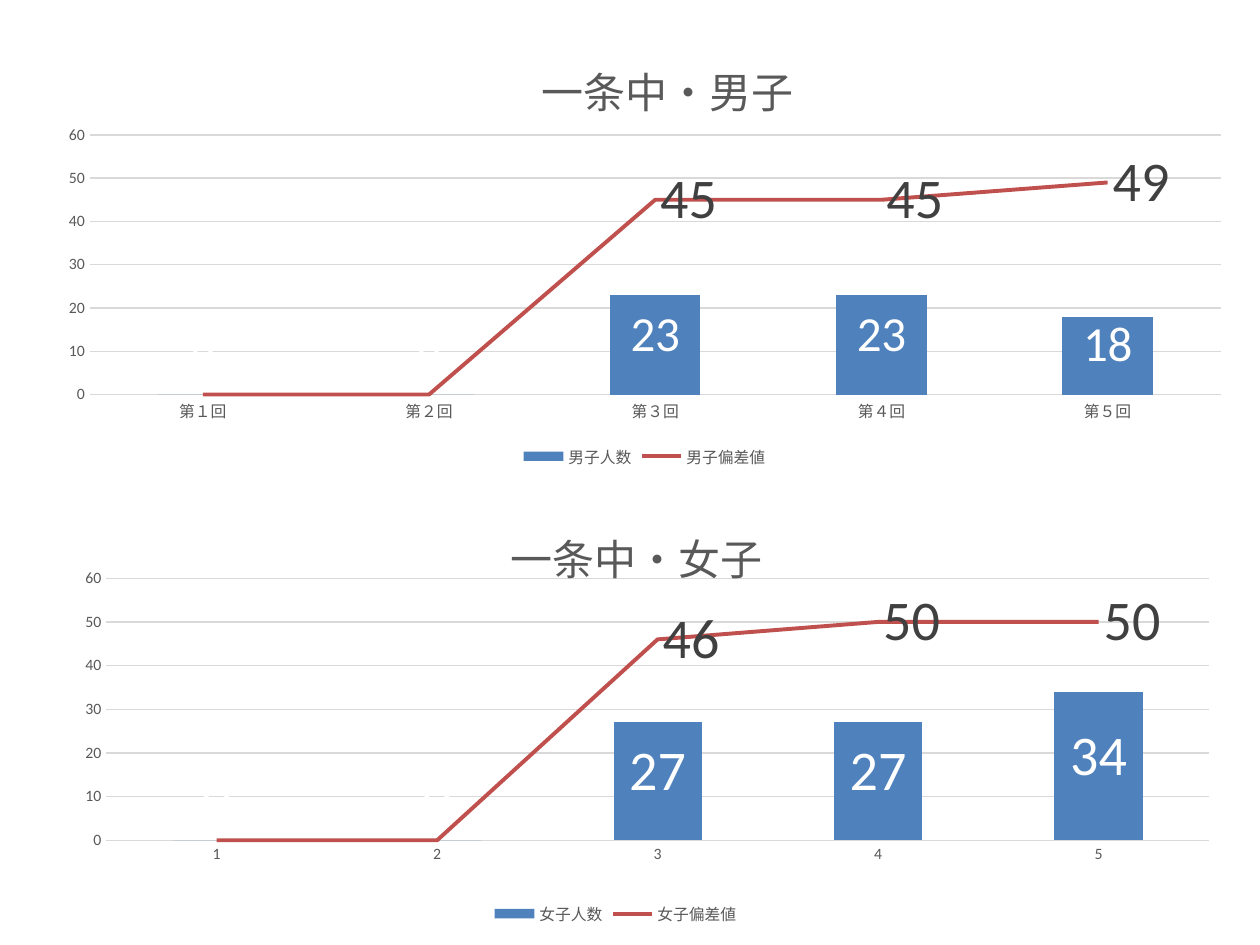
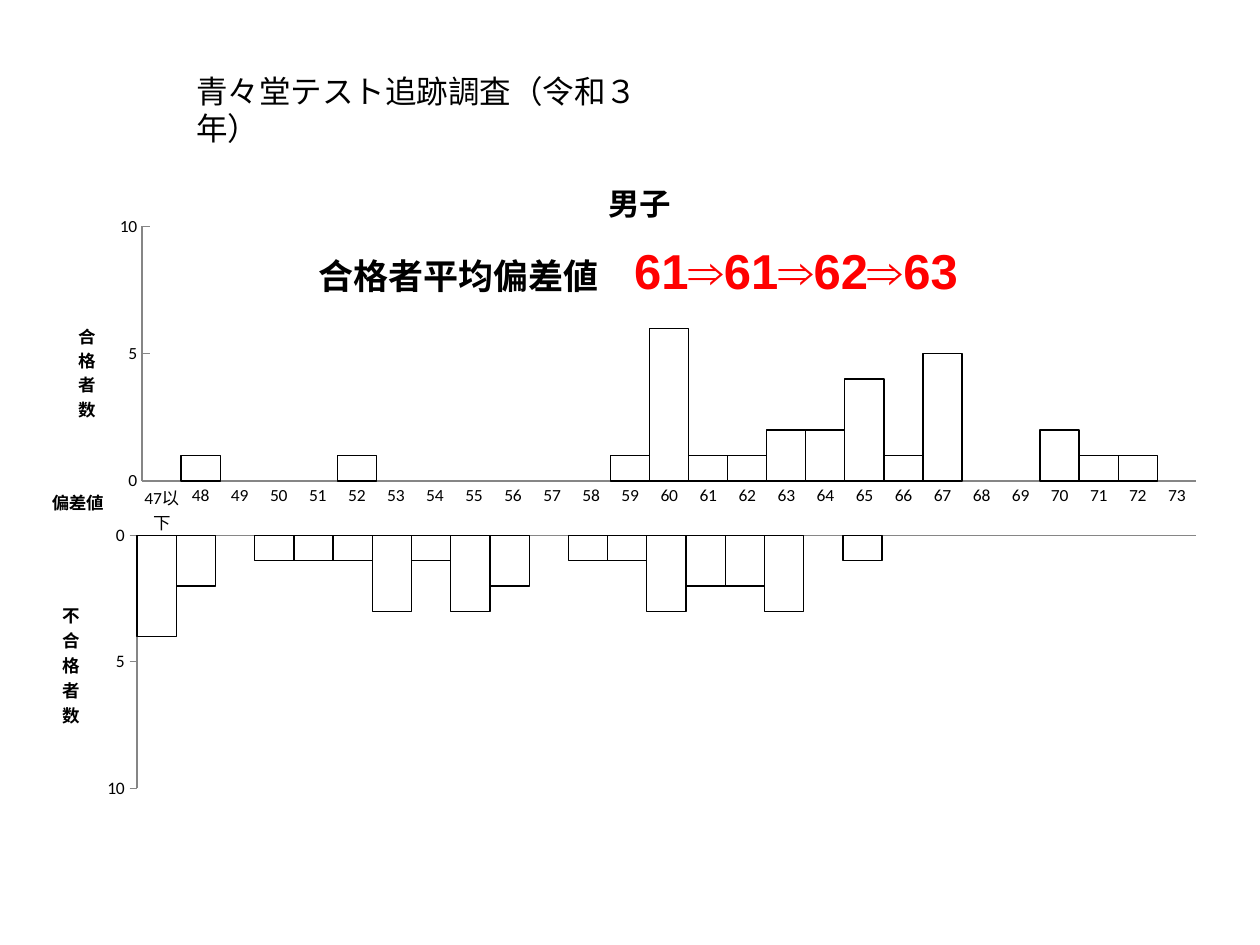
"""Builds two slides of exam result charts: attendance with scores, and a pass/fail histogram."""
from pptx import Presentation
from pptx.chart.data import CategoryChartData
from pptx.dml.color import RGBColor
from pptx.enum.chart import (XL_CHART_TYPE, XL_LABEL_POSITION, XL_LEGEND_POSITION,
                             XL_MARKER_STYLE, XL_TICK_LABEL_POSITION, XL_TICK_MARK)
from pptx.oxml import parse_xml
from pptx.oxml.ns import nsdecls, qn
from pptx.util import Inches, Pt

COLORS = {"count": "4F81BD", "score": "C0504D", "grid": "D9D9D9", "muted": "595959",
          "dark": "404040", "white": "FFFFFF", "black": "000000", "red": "FF0000",
          "axis": "868686"}


def apply(target, formats):
    for key, value in formats.items():
        if key == "color":
            target.color.rgb = RGBColor.from_string(COLORS[value])
        else:
            setattr(target, key, value)


def pin(part, index, x, y, size=None, mode="edge"):
    for old in part.findall(qn("c:layout")):
        part.remove(old)
    rules = [("layoutTarget", "inner")] if size else []
    if mode == "edge":
        rules += [("xMode", "edge"), ("yMode", "edge")]
    rules += [("x", x / 100), ("y", y / 100)]
    if size:
        rules += [("w", size[0] / 100), ("h", size[1] / 100)]
    body = "".join(f'<c:{tag} val="{value}"/>' for tag, value in rules)
    part.insert(index, parse_xml(
        f'<c:layout {nsdecls("c")}><c:manualLayout>{body}</c:manualLayout></c:layout>'))


deck = Presentation()
apply(deck, {"slide_width": Inches(10), "slide_height": Inches(7.5)})
percent = [side / 100 for side in (deck.slide_width, deck.slide_height) * 2]
trend_slide, histogram_slide = [deck.slides.add_slide(deck.slide_layouts[6]) for _ in range(2)]

SMALL = {"size": Pt(9), "name": "Calibri", "color": "muted"}
BASE = {"size": Pt(10), "name": "Calibri", "color": "black"}
BOLD = {**BASE, "bold": True}

girls = {"slide": trend_slide, "box": (0.4, 51.07, 96.9, 47.33), "plot": (8.3, 21.4, 90.3, 58.6),
         "cats": range(1, 6), "title": "一条中・女子", "label": Pt(32),
         "series": {"女子人数": (0, 0, 27, 27, 34), "女子偏差値": (0, 0, 46, 50, 50)}}
boys = {"slide": trend_slide, "box": (3.5, 1.6, 95.3, 48.4), "plot": (3.8, 26.2, 94.2, 56.8),
        "cats": [f"第{n}回" for n in "１２３４５"], "title": "一条中・男子", "label": Pt(28),
        "series": {"男子人数": (0, 0, 23, 23, 18), "男子偏差値": (0, 0, 45, 45, 49)}}
passed = {"slide": histogram_slide, "box": (3.5, 15.47, 93.7, 41.07),
          "plot": (8.3, 21.3, 89.3, 67.7), "cats": ["47以下", *map(str, range(48, 74))],
          "axis_title": "合格者数", "axis_spot": (2.6, 46), "tick": XL_TICK_MARK.INSIDE,
          "series": {"Series 1": [None, 1, None, None, None, 1, *[None] * 6, 1, 6, 1, 1, 2, 2, 4,
                                  1, 5, None, None, 2, 1, 1, None]}}
failed = {"slide": histogram_slide, "box": (2.8, 51.2, 93.9, 33.47),
          "plot": (8.6, 16.3, 89.5, 80), "cats": range(1, 28),
          "axis_title": "不合格者数", "axis_spot": (2, 36), "tick": XL_TICK_MARK.OUTSIDE,
          "series": {"Series 1": [4, 2, None, 1, 1, 1, 3, 1, 3, 2, None, 1, 1, 3, 2, 2, 3, None,
                                  1, *[None] * 8]}}

for group in (girls, boys, passed, failed):
    data = CategoryChartData()
    data.categories = [str(cat) for cat in group["cats"]]
    for name, values in group["series"].items():
        data.add_series(name, values)
    box = [round(unit * share) for unit, share in zip(percent, group["box"])]
    chart = group["slide"].shapes.add_chart(XL_CHART_TYPE.COLUMN_CLUSTERED, *box, data).chart
    apply(chart, {"has_title": False, "has_legend": False})
    apply(chart.font, BASE)
    apply(chart.plots[0], {"vary_by_categories": False, "overlap": 0})
    apply(chart.category_axis, {"major_tick_mark": XL_TICK_MARK.NONE})
    left, top, *size = group["plot"]
    pin(chart.plots[0]._element.getparent(), 0, left, top, size)
    group["chart"] = chart

for group in (girls, boys):
    chart = group["chart"]
    count_bars = chart.plots[0]
    count_bars.gap_width = 150
    bar_xml = count_bars._element
    score_xml = bar_xml.findall(qn("c:ser"))[1]
    for flag in score_xml.findall(qn("c:invertIfNegative")):
        score_xml.remove(flag)
    axis_ids = "".join(f'<c:axId val="{axis.get("val")}"/>' for axis in bar_xml.findall(qn("c:axId")))
    line_xml = parse_xml(f'<c:lineChart {nsdecls("c")}><c:grouping val="standard"/>'
                         f'<c:varyColors val="0"/><c:marker val="1"/>{axis_ids}</c:lineChart>')
    line_xml.insert(2, score_xml)
    bar_xml.addnext(line_xml)

    counts, scores = [plot.series[0] for plot in chart.plots]
    counts.format.fill.solid()
    counts.format.fill.fore_color.rgb = RGBColor.from_string(COLORS["count"])
    apply(scores.format.line, {"color": "score", "width": Pt(2.25)})
    apply(scores, {"smooth": False})
    apply(scores.marker, {"style": XL_MARKER_STYLE.NONE})

    count_font = {"size": group["label"], "name": "Calibri", "color": "white"}
    score_font = {"size": Pt(32), "name": "Calibri", "color": "dark"}
    for series, font, spot in ((counts, count_font, XL_LABEL_POSITION.OUTSIDE_END),
                               (scores, score_font, XL_LABEL_POSITION.RIGHT)):
        apply(series.data_labels, {"show_value": True, "position": spot})
        apply(series.data_labels.font, font)
    for index in (2, 3, 4):
        label = counts.points[index].data_label
        apply(label.font, count_font)
        label.position = XL_LABEL_POSITION.CENTER
        pin(label._dLbl, 1, 0, -2.2, mode="offset")
    for index in (1, 0):
        scores.data_labels._element.insert(0, parse_xml(
            f'<c:dLbl {nsdecls("c")}><c:idx val="{index}"/><c:delete val="1"/></c:dLbl>'))

    chart.chart_title.text_frame.text = group["title"]
    apply(chart.chart_title.text_frame.paragraphs[0].runs[0].font,
          {"size": Pt(24), "bold": False, "color": "muted"})
    pin(chart.chart_title._element, 1, 40.8, 7)
    chart.has_legend = True
    apply(chart.legend, {"position": XL_LEGEND_POSITION.BOTTOM, "include_in_layout": False})
    apply(chart.legend.font, SMALL)
    hairline = {"color": "grid", "width": Pt(0.75)}
    for axis in (chart.category_axis, chart.value_axis):
        apply(axis.tick_labels.font, SMALL)
    apply(chart.category_axis.format.line, hairline)
    apply(chart.value_axis, {"major_tick_mark": XL_TICK_MARK.NONE, "minimum_scale": 0,
                             "maximum_scale": 60, "major_unit": 10})
    apply(chart.value_axis.major_gridlines.format.line, hairline)
    chart.value_axis.format.line.fill.background()

for group in (passed, failed):
    chart = group["chart"]
    chart.plots[0].gap_width = 0
    people = chart.plots[0].series[0]
    people.format.fill.background()
    apply(people.format.line, {"color": "black", "width": Pt(0.75)})
    apply(chart.value_axis, {"has_major_gridlines": False, "major_tick_mark": group["tick"],
                             "minimum_scale": 0, "maximum_scale": 10, "major_unit": 5})
    for axis in (chart.category_axis, chart.value_axis):
        apply(axis.format.line, {"color": "axis", "width": Pt(0.75)})
    heading = chart.value_axis.axis_title
    heading.text_frame.text = group["axis_title"]
    apply(heading.text_frame.paragraphs[0].runs[0].font, BOLD)
    body = heading._element.find(".//" + qn("a:bodyPr"))
    body.set("rot", "0")
    body.set("vert", "wordArtVertRtl")
    pin(heading._element, 1, *group["axis_spot"])

pass_chart, fail_chart = passed["chart"], failed["chart"]
for heading, text, font, spot in (
        (pass_chart.chart_title, "男子", {**BOLD, "size": Pt(18)}, (47.3, 6.5)),
        (pass_chart.category_axis.axis_title, "偏差値", BOLD, (0.4, 90))):
    heading.text_frame.text = text
    apply(heading.text_frame.paragraphs[0].runs[0].font, font)
    pin(heading._element, 1, *spot)
apply(fail_chart.category_axis, {"tick_label_position": XL_TICK_LABEL_POSITION.NONE})
apply(fail_chart.value_axis, {"reverse_order": True})

for share_box, runs in (
        ((24.3, 24.8, 56.9, 7.6),
         (("合格者平均偏差値\u3000".replace("\u3000", "　"), {"size": Pt(20), "bold": True, "color": "black"}),
          ("61⇒61⇒62⇒63", {"size": Pt(28), "bold": True, "color": "red"}))),
        ((14.6, 6.93, 37.7, 5.33),
         (("青々堂テスト追跡調査（令和３年）", {"size": Pt(18), "color": "black"}),))):
    box = [round(unit * share) for unit, share in zip(percent, share_box)]
    frame = histogram_slide.shapes.add_textbox(*box).text_frame
    frame.word_wrap = True
    for text, font in runs:
        run = frame.paragraphs[0].add_run()
        run.text = text
        apply(run.font, {"name": "Arial", **font})

deck.save("out.pptx")
